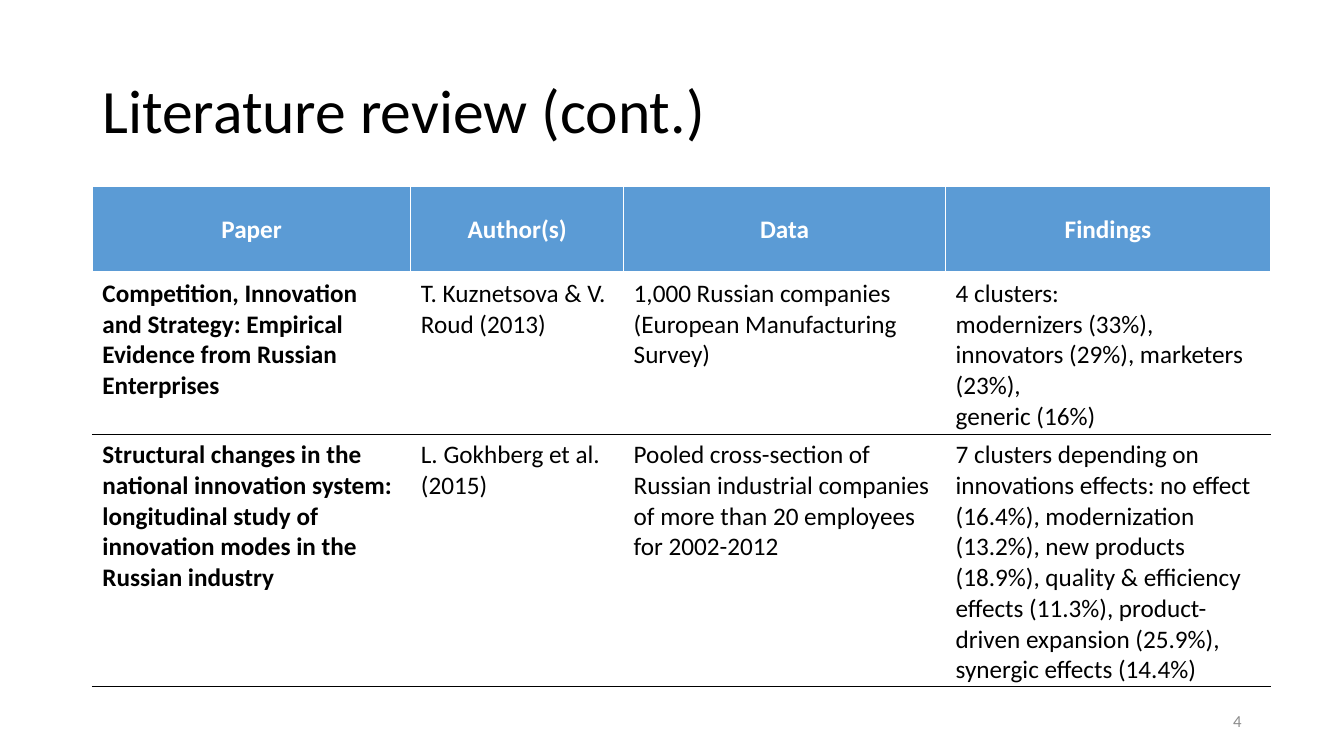
from dataclasses import dataclass

from lxml import etree
from pptx import Presentation
from pptx.dml.color import RGBColor
from pptx.enum import text
from pptx.oxml import ns
from pptx.util import Pt


@dataclass(frozen=True)
class Theme:
    font: str = "Calibri"
    ink: str = "000000"
    paper: str = "FFFFFF"
    accent: str = "5B9BD5"
    muted: str = "8C8C8C"
    title: int = 44
    body: int = 18
    note: int = 12


class SlideBuilder:
    def __init__(self, slide, theme):
        self.slide = slide
        self.theme = theme

    def add_lines(self, frame, lines, size, color, bold=False,
                  align=text.PP_ALIGN.LEFT, spacing=None):
        for index, line in enumerate(lines):
            paragraph = frame.paragraphs[0] if index == 0 else frame.add_paragraph()
            paragraph.alignment = align
            if spacing:
                paragraph.line_spacing = spacing
            run = paragraph.add_run()
            run.text = line
            run.font.name = self.theme.font
            run.font.size = Pt(size)
            run.font.bold = bold
            run.font.color.rgb = RGBColor.from_string(color)

    def label(self, box, words, size, color, **style):
        frame = self.slide.shapes.add_textbox(*map(Pt, box)).text_frame
        frame.word_wrap = True
        frame.vertical_anchor = text.MSO_ANCHOR.MIDDLE
        self.add_lines(frame, [words], size, color, **style)

    def border(self, cell, side, color, width):
        properties = cell._tc.get_or_add_tcPr()
        line = etree.SubElement(properties, ns.qn(f"a:ln{side}"), w=str(Pt(width)))
        solid = etree.SubElement(line, ns.qn("a:solidFill"))
        etree.SubElement(solid, ns.qn("a:srgbClr"), val=color)

    def cell(self, cell, lines, row, column):
        theme = self.theme
        header = row == 0
        top = theme.ink if row > 1 else theme.paper
        bottom = theme.paper if header else theme.ink
        top_width = 3 if row == 1 else 1
        bottom_width = 3 if header else 1
        for side, color, width in (("L", theme.paper, 1), ("R", theme.paper, 1),
                                   ("T", top, top_width), ("B", bottom, bottom_width)):
            self.border(cell, side, color, width)
        if header:
            cell.fill.solid()
            cell.fill.fore_color.rgb = RGBColor.from_string(theme.accent)
            cell.vertical_anchor = text.MSO_ANCHOR.MIDDLE
        else:
            cell.fill.background()
        self.add_lines(cell.text_frame, lines, theme.body,
                       theme.paper if header else theme.ink,
                       bold=header or column == 0,
                       align=text.PP_ALIGN.CENTER if header else text.PP_ALIGN.LEFT)

    def table(self, box, widths, heights, rows):
        holder = self.slide.shapes.add_table(len(rows), len(widths), *map(Pt, box))
        grid = holder.table
        grid.horz_banding = False
        for column, width in zip(grid.columns, widths):
            column.width = Pt(width)
        for row, height in zip(grid.rows, heights):
            row.height = Pt(height)
        holder.height = Pt(box[3])
        for r, papers in enumerate(rows):
            for c, lines in enumerate(papers):
                self.cell(grid.cell(r, c), lines, r, c)


REVIEW = [
    [["Paper"], ["Author(s)"], ["Data"], ["Findings"]],
    [
        ["Competition, Innovation and Strategy: Empirical Evidence from Russian Enterprises"],
        ["T. Kuznetsova & V. Roud (2013)"],
        ["1,000 Russian companies (European Manufacturing Survey)"],
        ["4 clusters:",
         "modernizers (33%), innovators (29%), marketers (23%),",
         "generic (16%)"],
    ],
    [
        ["Structural changes in the national innovation system: "
         "longitudinal study of innovation modes in the Russian industry"],
        ["L. Gokhberg et al. (2015)"],
        ["Pooled cross-section of Russian industrial companies "
         "of more than 20 employees for 2002-2012"],
        ["7 clusters depending on innovations effects: no effect (16.4%), "
         "modernization (13.2%), new products (18.9%), "
         "quality & efficiency effects (11.3%), "
         "product-driven expansion (25.9%), synergic effects (14.4%)"],
    ],
]


def main():
    deck = Presentation()
    deck.slide_width, deck.slide_height = Pt(960), Pt(540)
    theme = Theme()
    builder = SlideBuilder(deck.slides.add_slide(deck.slide_layouts[6]), theme)
    builder.label((66, 28.75, 828, 104.4), "Literature review (cont.)",
                  theme.title, theme.ink, spacing=0.9)
    builder.table((66, 133.2, 841.5, 358), (227.5, 152, 230, 232),
                  (62, 114.5, 132), REVIEW)
    builder.label((678, 500.5, 216, 28.75), "4", theme.note, theme.muted,
                  align=text.PP_ALIGN.RIGHT)
    deck.save("out.pptx")


if __name__ == "__main__":
    main()
